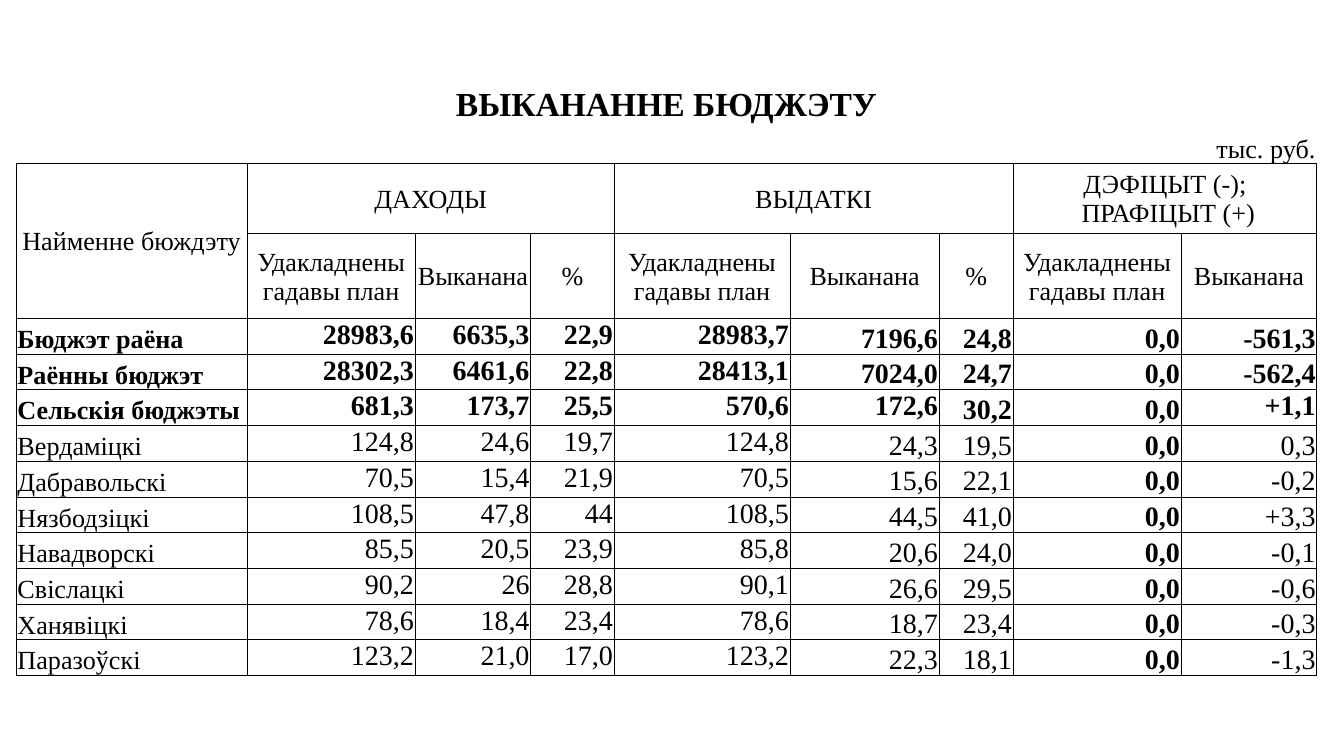
from lxml import etree
from pptx import Presentation
from pptx.dml.color import RGBColor
from pptx.enum.text import MSO_ANCHOR, PP_ALIGN
from pptx.oxml.ns import qn
from pptx.util import Inches, Pt

TOP, MIDDLE, BOTTOM = MSO_ANCHOR.TOP, MSO_ANCHOR.MIDDLE, MSO_ANCHOR.BOTTOM
LEFT, CENTER, RIGHT = PP_ALIGN.LEFT, PP_ALIGN.CENTER, PP_ALIGN.RIGHT

COLORS = {"ink": "000000"}
FONT = "Times New Roman"
PLAIN_STYLE = "{2D5ABB26-0587-4C30-8999-92F81FD0307C}"

TITLE = "ВЫКАНАННЕ БЮДЖЭТУ"
UNIT = "тыс. руб."
NAME_HEADING = "Найменне бюждэту"
PLAN, DONE, PERCENT = "Удакладнены гадавы план", "Выканана", "%"
GROUPS = [
    (1, 5, "ДАХОДЫ"),
    (6, 9, "ВЫДАТКІ"),
    (10, 12, "ДЭФІЦЫТ (-);\n ПРАФІЦЫТ (+)"),
]
SUBHEADINGS = [PLAN, DONE, PERCENT, PLAN, DONE, PERCENT, PLAN, DONE]
BUDGETS = [
    ("Бюджэт раёна", "28983,6", "6635,3", "22,9", "28983,7", "7196,6", "24,8", "0,0", "-561,3"),
    ("Раённы бюджэт", "28302,3", "6461,6", "22,8", "28413,1", "7024,0", "24,7", "0,0", "-562,4"),
    ("Сельскія бюджэты", "681,3", "173,7", "25,5", "570,6", "172,6", "30,2", "0,0", "+1,1"),
    ("Вердаміцкі", "124,8", "24,6", "19,7", "124,8", "24,3", "19,5", "0,0", "0,3"),
    ("Дабравольскі", "70,5", "15,4", "21,9", "70,5", "15,6", "22,1", "0,0", "-0,2"),
    ("Нязбодзіцкі", "108,5", "47,8", "44", "108,5", "44,5", "41,0", "0,0", "+3,3"),
    ("Навадворскі", "85,5", "20,5", "23,9", "85,8", "20,6", "24,0", "0,0", "-0,1"),
    ("Свіслацкі", "90,2", "26", "28,8", "90,1", "26,6", "29,5", "0,0", "-0,6"),
    ("Ханявіцкі", "78,6", "18,4", "23,4", "78,6", "18,7", "23,4", "0,0", "-0,3"),
    ("Паразоўскі", "123,2", "21,0", "17,0", "123,2", "22,3", "18,1", "0,0", "-1,3"),
]
SUMMARY_COUNT = 3
RAISED_VALUES = {"172,6", "+1,1"}
BOTTOM_FIELDS = {0, 5, 6, 7, 8}
BALANCE_PLAN = 7

FIELD_SPANS = [(0, 0), (1, 2), (3, 4), (5, 5), (6, 6), (7, 8), (9, 9), (10, 10), (11, 12)]
UNIT_ROW_SPANS = [(2, 3), (4, 5), (8, 9), (10, 11)]
WIDTHS = [1.72, 1, 0.25, 0.65, 0.21, 0.62, 1.31, 0.89, 0.22, 0.55, 1.25, 0.12, 0.89]
TABLE_LEFT, TABLE_TOP, TABLE_HEIGHT = 0.12, 0.61, 4.42
HEADER_HEIGHTS = [0.34, 0.27, 0.52, 0.63]
FIRST_BUDGET_ROW = len(HEADER_HEIGHTS)
BUDGET_HEIGHT = (TABLE_HEIGHT - sum(HEADER_HEIGHTS)) / len(BUDGETS)
HEIGHTS = HEADER_HEIGHTS + [BUDGET_HEIGHT] * len(BUDGETS)


def add_borders(cell, sides):
    properties = cell._tc.get_or_add_tcPr()
    for side in ("L", "R", "T", "B"):
        line = etree.SubElement(properties, qn(f"a:ln{side}"))
        if side in sides:
            line.set("w", str(Pt(0.5)))
            fill = etree.SubElement(line, qn("a:solidFill"))
            etree.SubElement(fill, qn("a:srgbClr"), val=COLORS["ink"])
        else:
            line.set("w", "0")
            etree.SubElement(line, qn("a:noFill"))


def prepare_cell(cell, sides):
    cell.margin_left = cell.margin_right = cell.margin_top = Inches(0.01)
    cell.margin_bottom = 0
    add_borders(cell, sides)
    cell.fill.background()
    para = cell.text_frame.paragraphs[0]
    etree.SubElement(para._p, qn("a:endParaRPr"), sz="1400")


def write(cell, text, align=CENTER, anchor=MIDDLE, size=14, bold=False):
    cell.text_frame.text = text
    cell.vertical_anchor = anchor
    for para in cell.text_frame.paragraphs:
        para.alignment = align
        for span in para.runs:
            span.font.name = FONT
            span.font.size = Pt(size)
            span.font.bold = bold
            span.font.color.rgb = RGBColor.from_string(COLORS["ink"])


def merge(table, row, first, last, last_row=None):
    origin = table.cell(row, first)
    end_row = row if last_row is None else last_row
    if (end_row, last) != (row, first):
        origin.merge(table.cell(end_row, last))
    return origin


def fill_headers(table):
    write(merge(table, 0, 0, len(WIDTHS) - 1), TITLE, size=18, bold=True)
    for first, last in UNIT_ROW_SPANS:
        merge(table, 1, first, last)
    write(table.cell(1, len(WIDTHS) - 1), UNIT, RIGHT, BOTTOM)
    write(merge(table, 2, 0, 0, 3), NAME_HEADING)
    for first, last, heading in GROUPS:
        write(merge(table, 2, first, last), heading)
    for (first, last), heading in zip(FIELD_SPANS[1:], SUBHEADINGS):
        write(merge(table, 3, first, last), heading)


def fill_budgets(table):
    for index, budget in enumerate(BUDGETS):
        for field, (text, (first, last)) in enumerate(zip(budget, FIELD_SPANS)):
            low = field in BOTTOM_FIELDS and text not in RAISED_VALUES
            write(
                merge(table, FIRST_BUDGET_ROW + index, first, last),
                text,
                align=RIGHT if field else LEFT,
                anchor=BOTTOM if low else TOP,
                size=15 if field else 14,
                bold=index < SUMMARY_COUNT or field == BALANCE_PLAN,
            )


def main():
    deck = Presentation()
    deck.slide_width = Inches(10)
    deck.slide_height = deck.slide_width * 9 // 16
    page = deck.slides.add_slide(deck.slide_layouts[6])
    frame = page.shapes.add_table(
        len(HEIGHTS), len(WIDTHS), Inches(TABLE_LEFT), Inches(TABLE_TOP),
        Inches(sum(WIDTHS)), Inches(TABLE_HEIGHT),
    )
    table = frame.table
    table.first_row = table.horz_banding = False
    table._tbl.tblPr.find(qn("a:tableStyleId")).text = PLAIN_STYLE
    for column, width in zip(table.columns, WIDTHS):
        column.width = Inches(width)
    for index, (row, height) in enumerate(zip(table.rows, HEIGHTS)):
        row.height = Inches(height)
        sides = ("", "B")[index] if index < 2 else "LRTB"
        for cell in row.cells:
            prepare_cell(cell, sides)
    fill_headers(table)
    fill_budgets(table)
    deck.save("out.pptx")


if __name__ == "__main__":
    main()
